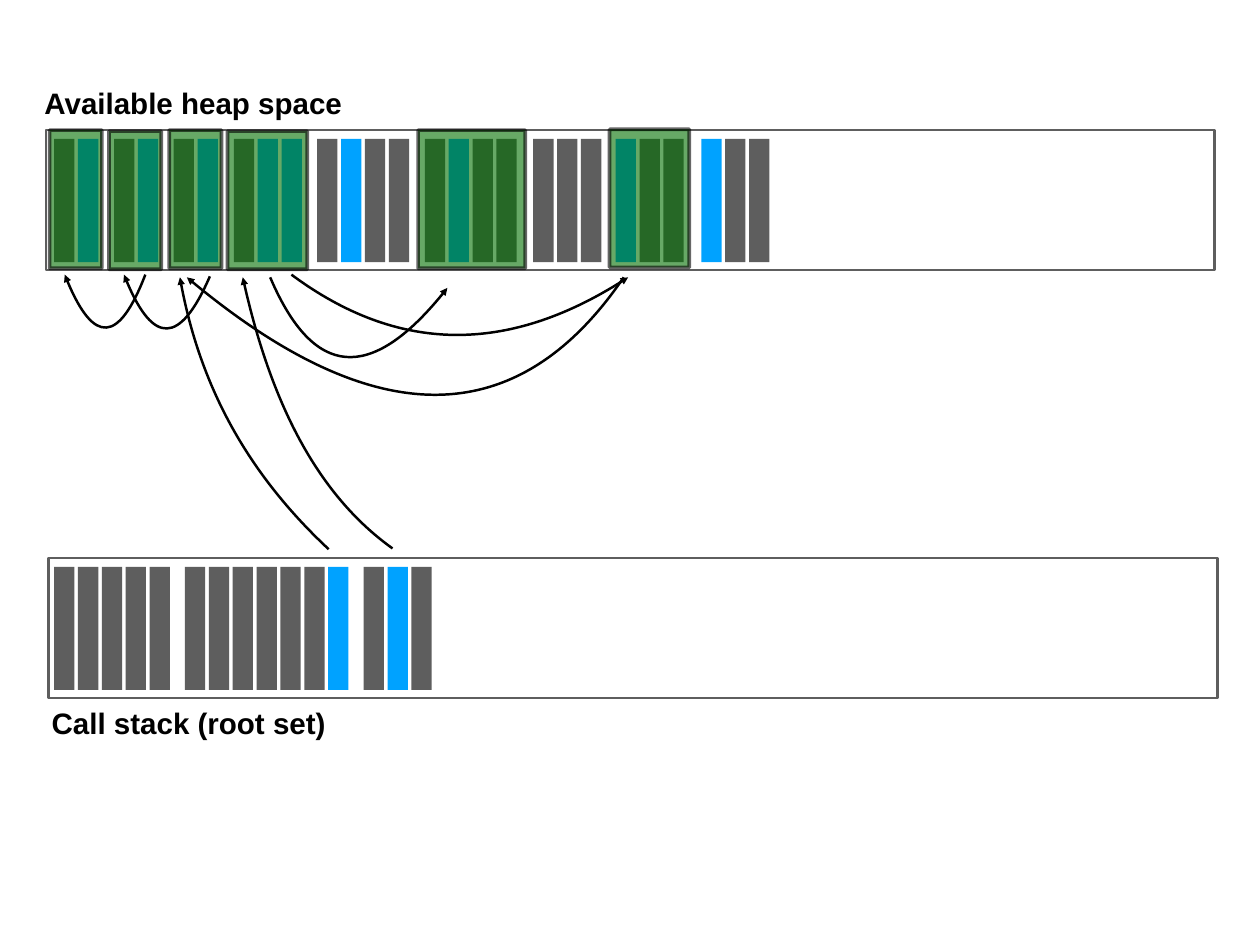
import pptx
import pptx.dml.color
import pptx.enum.shapes
import pptx.enum.text
import pptx.oxml
import pptx.oxml.ns
import pptx.util

Pt = pptx.util.Pt
COLORS = {"gray": "5E5E5E", "blue": "00A2FF", "green": "027001", "black": "000000"}
BAR_COLORS = {"G": "gray", "B": "blue"}
BAR_WIDTH, BAR_HEIGHT, BAR_PITCH = 16.5, 100, 19.4

HEAP_TOP, STACK_TOP = 105.8, 453.6
# Left edge and bar pattern of each memory block (G gray, B blue)
HEAP_BLOCKS = [
    (44, "GB"), (92.7, "GB"), (141.2, "GB"), (190, "GBB"), (257.8, "GBGG"),
    (345.3, "GBGG"), (433.4, "GGG"), (500.4, "BGG"), (570, "BGG"),
]
STACK_BLOCKS = [(44, "GGGGG"), (150.3, "GGGGGGB"), (295.6, "GBG")]
# Left, top and bar count of each reachable block
REACHABLE = [
    (40.3, 105.8, 2), (88.6, 106.6, 2), (137.5, 105.8, 2),
    (185, 106.6, 3), (339.8, 105.8, 4), (495.4, 105.1, 3),
]
# Start, two control points and end of each reference
REFERENCES = [
    [(118.1, 223.2), (96.5, 279.4), (74.9, 280.1), (52.6, 223.2)],
    [(170.6, 224.6), (146.2, 280.8), (123.1, 280.1), (100.8, 223.2)],
    [(236.9, 223.2), (323.3, 287.3), (414.7, 288), (510.5, 225.4)],
    [(219.6, 225.4), (254.9, 308.2), (303.1, 311), (363.6, 234)],
    [(506.9, 225.4), (420.5, 352.1), (302.4, 352.1), (151.9, 225.4)],
    [(267.1, 446.4), (201.6, 385.2), (161.3, 311.8), (146.2, 225.4)],
    [(319, 445.7), (260.6, 403.9), (220.3, 330.5), (197.3, 225.4)],
]


def lowest_point(points, steps=200):
    """Return the largest y that the cubic curve reaches."""
    a, b, c, d = (y for x, y in points)
    times = [step / steps for step in range(steps + 1)]
    return max(
        a * (1 - t) ** 3 + 3 * b * t * (1 - t) ** 2 + 3 * c * t * t * (1 - t) + d * t ** 3
        for t in times
    )


class Diagram:
    def __init__(self, slide, font="Arial", font_size=24):
        self.slide = slide
        self.font = font
        self.font_size = font_size

    def color(self, name):
        return pptx.dml.color.RGBColor.from_string(COLORS[name])

    def set_alpha(self, fill, percent):
        color = fill._xPr.find(".//" + pptx.oxml.ns.qn("a:srgbClr"))
        alpha = pptx.oxml.parse_xml(
            f'<a:alpha {pptx.oxml.ns.nsdecls("a")} val="{percent * 1000}"/>'
        )
        color.append(alpha)

    def rectangle(self, left, top, width, height, fill=None, line=None, line_width=2, alpha=100):
        shape = self.slide.shapes.add_shape(
            pptx.enum.shapes.MSO_SHAPE.RECTANGLE, Pt(left), Pt(top), Pt(width), Pt(height)
        )
        shape.shadow.inherit = False
        for part, name in ((shape.fill, fill), (shape.line.fill, line)):
            if name is None:
                part.background()
                continue
            part.solid()
            part.fore_color.rgb = self.color(name)
            if alpha < 100:
                self.set_alpha(part, alpha)
        if line:
            shape.line.width = Pt(line_width)

    def memory(self, left, top, blocks):
        """Draw a memory frame and the bars of its blocks."""
        self.rectangle(left, top, 949.7, 113.8, line="gray")
        for block_left, pattern in blocks:
            for index, letter in enumerate(pattern):
                self.rectangle(
                    block_left + index * BAR_PITCH, top + 7.2,
                    BAR_WIDTH, BAR_HEIGHT, fill=BAR_COLORS[letter],
                )

    def label(self, left, top, width, text):
        shape = self.slide.shapes.add_textbox(Pt(left), Pt(top), Pt(width), Pt(36))
        frame = shape.text_frame
        frame.text = text
        frame.word_wrap = False
        frame.auto_size = pptx.enum.text.MSO_AUTO_SIZE.SHAPE_TO_FIT_TEXT
        frame.vertical_anchor = pptx.enum.text.MSO_ANCHOR.MIDDLE
        frame.margin_left = frame.margin_right = Pt(4)
        frame.margin_top = frame.margin_bottom = Pt(4)
        paragraph = frame.paragraphs[0]
        paragraph.alignment = pptx.enum.text.PP_ALIGN.CENTER
        font = paragraph.runs[0].font
        font.name, font.size, font.bold = self.font, Pt(self.font_size), True
        font.color.rgb = self.color("black")

    def curved_arrow(self, points):
        start, *others = [(Pt(x), Pt(y)) for x, y in points]
        builder = self.slide.shapes.build_freeform(*start)
        builder.add_line_segments(others, close=False)
        shape = builder.convert_to_shape()
        shape.shadow.inherit = False
        shape.fill.background()
        shape.line.color.rgb = self.color("black")
        shape.line.width = Pt(2)

        # Turn the three segments into one cubic curve and fit its frame
        qn = pptx.oxml.ns.qn
        outline = shape._element.find(".//" + qn("a:path"))
        curve = pptx.oxml.parse_xml(f'<a:cubicBezTo {pptx.oxml.ns.nsdecls("a")}/>')
        for segment in outline.findall(qn("a:lnTo")):
            curve.append(segment[0])
            outline.remove(segment)
        outline.append(curve)
        shape.height = Pt(lowest_point(points)) - shape.top
        outline.set("h", str(shape.height))

        arrowhead = pptx.oxml.parse_xml(
            f'<a:tailEnd {pptx.oxml.ns.nsdecls("a")} type="triangle" w="med" len="med"/>'
        )
        shape.line._get_or_add_ln().append(arrowhead)


def main():
    presentation = pptx.Presentation()
    presentation.slide_width, presentation.slide_height = Pt(1024), Pt(768)
    diagram = Diagram(presentation.slides.add_slide(presentation.slide_layouts[6]))

    diagram.memory(37.4, HEAP_TOP, HEAP_BLOCKS)
    diagram.label(31.7, 65.5, 250.6, "Available heap space")
    diagram.memory(39.6, STACK_TOP, STACK_BLOCKS)
    diagram.label(37.4, 569.5, 231.8, "Call stack (root set)")
    for points in REFERENCES:
        diagram.curved_arrow(points)
    for left, top, bars in REACHABLE:
        diagram.rectangle(
            left, top, 42.5 + 22.3 * (bars - 2), 112.3,
            fill="green", line="black", line_width=3, alpha=60,
        )
    presentation.save("out.pptx")


if __name__ == "__main__":
    main()
